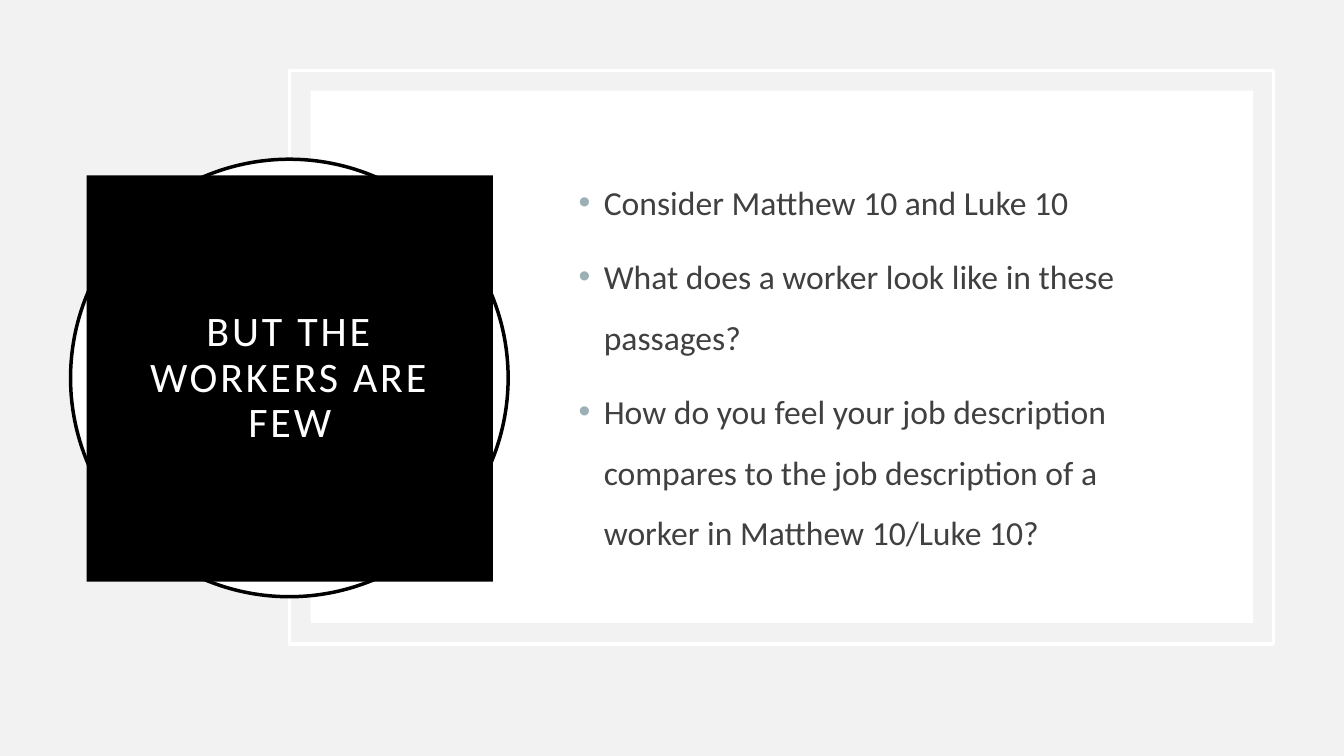
from lxml import etree
from pptx import Presentation
from pptx.dml.color import RGBColor
from pptx.enum.shapes import MSO_SHAPE
from pptx.enum.text import MSO_ANCHOR, PP_ALIGN
from pptx.oxml.ns import qn
from pptx.util import Inches, Pt

RECTANGLE, OVAL = MSO_SHAPE.RECTANGLE, MSO_SHAPE.OVAL
MIDDLE = MSO_ANCHOR.MIDDLE
CENTER = PP_ALIGN.CENTER
WHITE, BLACK = "FFFFFF", "000000"


def color(value):
    return RGBColor.from_string(value)


def add_text(para, text, size, text_color, formats):
    for name, value in formats.items():
        setattr(para, name, value)
    span = para.add_run()
    span.text = text
    for name, value in {"name": "Calibri", "size": Pt(size)}.items():
        setattr(span.font, name, value)
    span.font.color.rgb = color(text_color)
    return span


deck = Presentation()
deck.slide_width, deck.slide_height = Inches(13.33), Inches(7.5)
page = deck.slides.add_slide(deck.slide_layouts[6])
page.background.fill.solid()
page.background.fill.fore_color.rgb = color("F2F2F2")

# Frame, white panel, ring and title block, from back to front
shapes = [
    (RECTANGLE, (2.87, 0.7, 9.76, 5.69), None, WHITE),
    (RECTANGLE, (3.08, 0.9, 9.35, 5.28), WHITE, None),
    (OVAL, (0.7, 1.58, 4.34, 4.34), WHITE, BLACK),
    (RECTANGLE, (0.86, 1.74, 4.03, 4.03), BLACK, None),
]
for kind, place, fill, line in shapes:
    box = page.shapes.add_shape(kind, *map(Inches, place))
    box.shadow.inherit = False
    if fill:
        box.fill.solid()
        box.fill.fore_color.rgb = color(fill)
    else:
        box.fill.background()
    if line:
        box.line.color.rgb = color(line)
        box.line.width = Pt(2.5)
    else:
        box.line.fill.background()

# Title, in the front block
title = box.text_frame
title_format = {
    "word_wrap": True,
    "vertical_anchor": MIDDLE,
    "margin_left": Inches(0.45),
    "margin_right": Inches(0.45),
}
for name, value in title_format.items():
    setattr(title, name, value)
span = add_text(title.paragraphs[0], "BUT THE WORKERS ARE FEW", 30, WHITE,
                {"alignment": CENTER, "line_spacing": 0.9})
span.font._element.set("spc", "200")

# Bulleted questions
questions = [
    "Consider Matthew 10 and Luke 10",
    "What does a worker look like in these passages?",
    "How do you feel your job description compares to the job description "
    "of a worker in Matthew 10/Luke 10?",
]
body = page.shapes.add_textbox(
    Inches(5.64), Inches(1.4), Inches(6.25), Inches(4.28)).text_frame
body.word_wrap = True
body.vertical_anchor = MIDDLE
for index, question in enumerate(questions):
    para = body.add_paragraph() if index else body.paragraphs[0]
    add_text(para, question, 24, "404040",
             {"line_spacing": 1.5, "space_before": Pt(10)})
    properties = para._p.get_or_add_pPr()
    properties.set("marL", str(Inches(0.25)))
    properties.set("indent", str(-Inches(0.25)))
    bullet_color = etree.SubElement(properties, qn("a:buClr"))
    etree.SubElement(bullet_color, qn("a:srgbClr"), val="9BAFB5")
    etree.SubElement(properties, qn("a:buFont"), typeface="Arial")
    etree.SubElement(properties, qn("a:buChar"), char="•")

deck.save("out.pptx")
